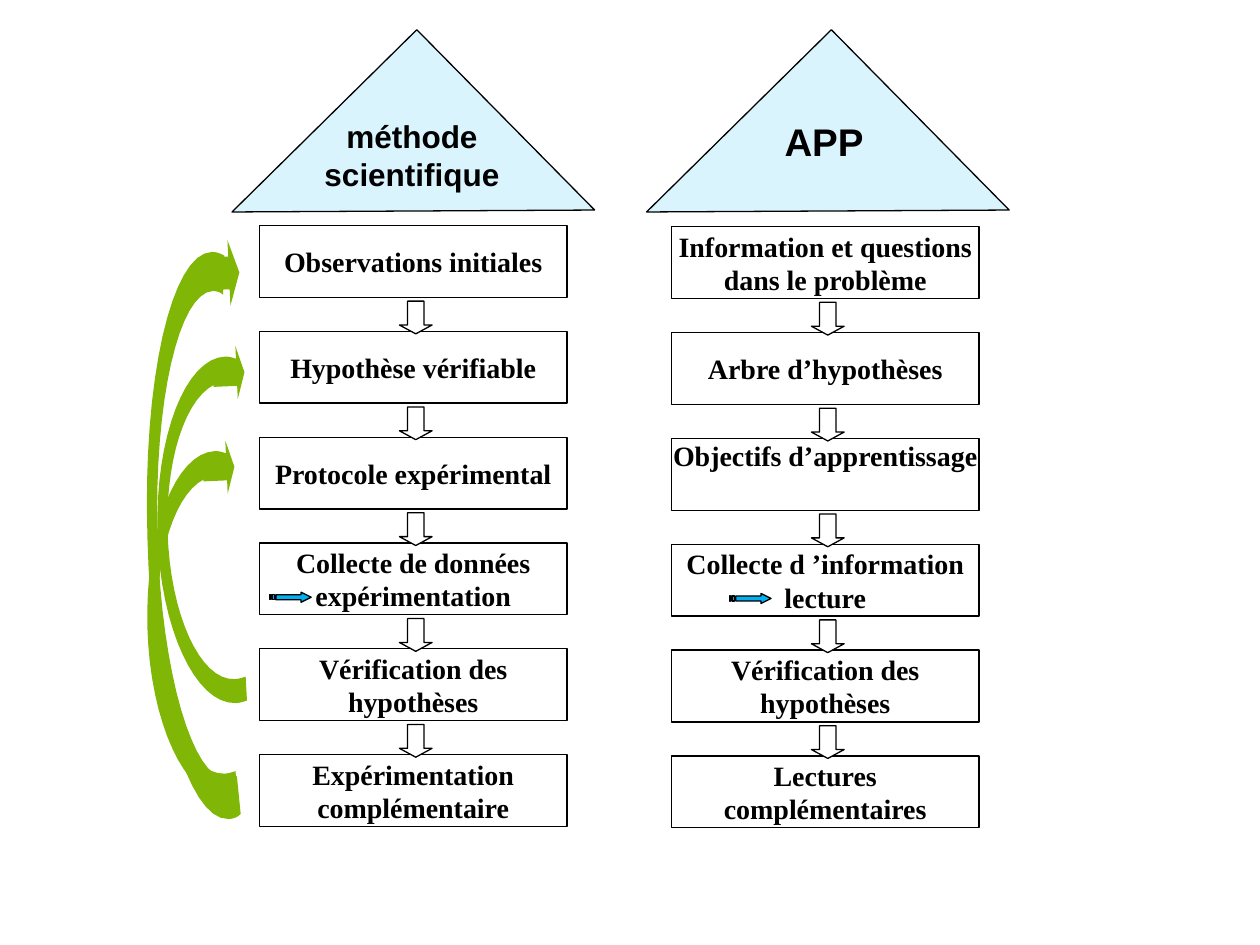
from dataclasses import dataclass

from pptx import Presentation
from pptx.dml.color import RGBColor
from pptx.enum.shapes import MSO_SHAPE
from pptx.enum.text import MSO_ANCHOR, PP_ALIGN
from pptx.util import Inches, Pt

Point = tuple[float, float]


@dataclass(frozen=True)
class Theme:
    black: RGBColor = RGBColor(0x00, 0x00, 0x00)
    white: RGBColor = RGBColor(0xFF, 0xFF, 0xFF)
    roof: RGBColor = RGBColor(0xDA, 0xF4, 0xFE)
    marker: RGBColor = RGBColor(0x00, 0xB0, 0xF0)
    loop: RGBColor = RGBColor(0x80, 0xB6, 0x06)
    step_font: str = "Times New Roman"
    step_size: int = 16
    head_font: str = "Arial"
    line: float = 0.75


@dataclass(frozen=True)
class Column:
    heading: str
    head_size: int
    head_top: float
    head_inset: float
    roof_left: float
    left: float
    top: float
    marker: Point
    steps: tuple[str, ...]
    top_aligned: tuple[int, ...] = ()


@dataclass(frozen=True)
class Loop:
    """A feedback arrow: band outline of cubic curves plus an arrowhead."""
    start: Point
    inner: tuple[tuple[Point, Point, Point], ...]
    turn: Point
    outer: tuple[tuple[Point, Point, Point], ...]
    head: tuple[float, float, float, float]
    shift: Point = (0, 0)


THEME = Theme()
BOX_W, BOX_H, PITCH = 2.44, 0.57, 0.84
ARROW, ARROW_DX, ARROW_DY = 0.26, 1.11, 0.6
HEAD_TILT = -2.6

COLUMNS = (
    Column("méthode scientifique", 18, 0.83, 0.1, 2.25, 2.06, 1.79, (2.14, 4.7),
           ("Observations initiales", "Hypothèse vérifiable",
            "Protocole expérimental", "Collecte de données expérimentation",
            "Vérification des hypothèses", "Expérimentation complémentaire")),
    Column("APP", 22, 0.67, 0.27, 5.54, 5.33, 1.8, (5.79, 4.71),
           ("Information et questions dans le problème", "Arbre d’hypothèses",
            "Objectifs d’apprentissage", "Collecte d ’information lecture",
            "Vérification des hypothèses", "Lectures complémentaires"), (2,)),
)

SHORT_BAND = dict(
    start=(1.87, 6.12),
    inner=(((1.84, 6.13), (1.81, 6.14), (1.78, 6.14)),
           ((1.51, 6.15), (1.27, 5.63), (1.25, 4.97)),
           ((1.23, 4.32), (1.44, 3.78), (1.72, 3.78)),
           ((1.74, 3.78), (1.77, 3.78), (1.8, 3.79))),
    turn=(1.8, 3.6),
    outer=(((1.77, 3.59), (1.74, 3.58), (1.71, 3.58)),
           ((1.39, 3.59), (1.15, 4.22), (1.17, 4.98)),
           ((1.19, 5.73), (1.47, 6.34), (1.79, 6.33)),
           ((1.82, 6.33), (1.85, 6.32), (1.88, 6.31))),
)
LOOPS = (
    Loop(**SHORT_BAND, head=(1.61, 3.5, 0.25, 0.42)),
    Loop(start=(1.88, 6.16),
         inner=(((1.86, 6.17), (1.83, 6.18), (1.8, 6.18)),
                ((1.53, 6.19), (1.28, 5.33), (1.25, 4.26)),
                ((1.22, 3.19), (1.42, 2.32), (1.69, 2.31)),
                ((1.72, 2.31), (1.75, 2.32), (1.77, 2.34))),
         turn=(1.78, 2.03),
         outer=(((1.75, 2.01), (1.71, 2.0), (1.68, 2.0)),
                ((1.36, 2.01), (1.13, 3.02), (1.17, 4.27)),
                ((1.2, 5.51), (1.49, 6.51), (1.81, 6.5)),
                ((1.85, 6.5), (1.88, 6.49), (1.91, 6.46))),
         head=(1.57, 1.91, 0.33, 0.52)),
    Loop(**SHORT_BAND, head=(1.69, 2.75, 0.25, 0.42), shift=(0.08, -0.75)),
)

# Striped marker: arrow and two stripes, relative to its top left corner
MARKER = (
    ((0.25, 0), (0.25, 0.02), (0.05, 0.02), (0.05, 0.06),
     (0.25, 0.06), (0.25, 0.08), (0.33, 0.04)),
    ((0.02, 0.02), (0.02, 0.06), (0.04, 0.06), (0.04, 0.02)),
    ((0, 0.02), (0, 0.06), (0.01, 0.06), (0.01, 0.02)),
)


def paint(sp, fill: RGBColor, outlined: bool = True) -> None:
    sp.shadow.inherit = False
    sp.fill.solid()
    sp.fill.fore_color.rgb = fill
    if outlined:
        sp.line.color.rgb = THEME.black
        sp.line.width = Pt(THEME.line)
    else:
        sp.line.fill.background()


def add_preset(shapes, kind, at, fill: RGBColor, outlined: bool = True):
    sp = shapes.add_shape(kind, *map(Inches, at))
    paint(sp, fill, outlined)
    return sp


def add_outline(shapes, contours, shift: Point, fill: RGBColor, outlined: bool = True):
    dx, dy = shift
    moved = [[(Inches(x + dx), Inches(y + dy)) for x, y in c] for c in contours]
    builder = shapes.build_freeform(*moved[0][0], scale=1.0)
    for i, contour in enumerate(moved):
        if i:
            builder.move_to(*contour[0])
        builder.add_line_segments(contour[1:], close=True)
    sp = builder.convert_to_shape()
    paint(sp, fill, outlined)
    return sp


def write(sp, text: str, font: str, size: int, anchor, inset: float = 0, top: float = 0) -> None:
    tf = sp.text_frame
    tf.word_wrap = True
    tf.vertical_anchor = anchor
    tf.margin_left = tf.margin_right = tf.margin_bottom = Inches(inset)
    tf.margin_top = Inches(top)
    p = tf.paragraphs[0]
    p.text = text
    p.alignment = PP_ALIGN.CENTER
    p.font.name, p.font.size, p.font.bold = font, Pt(size), True
    p.font.color.rgb = THEME.black


def sample_curves(start: Point, curves, steps: int = 16) -> list[Point]:
    points = [start]
    for b, c, d in curves:
        a = points[-1]
        for i in range(1, steps + 1):
            t = i / steps
            u = 1 - t
            points.append(tuple(
                u**3 * a[k] + 3 * u * u * t * b[k] + 3 * u * t * t * c[k] + t**3 * d[k]
                for k in (0, 1)))
    return points


def draw_column(shapes, col: Column) -> None:
    # Triangular roof with its heading
    roof = add_preset(shapes, MSO_SHAPE.RIGHT_TRIANGLE,
                      (col.roof_left, 0.67, 2.06, 2.01), THEME.roof)
    roof.rotation = 135.4
    box = shapes.add_textbox(*map(Inches, (col.left + 0.49, col.head_top, 1.44, 0.9)))
    write(box, col.heading, THEME.head_font, col.head_size,
          MSO_ANCHOR.TOP, 0.01, col.head_inset)

    # Step boxes
    tops = [col.top + i * PITCH for i in range(len(col.steps))]
    for i, (top, text) in enumerate(zip(tops, col.steps)):
        sp = add_preset(shapes, MSO_SHAPE.RECTANGLE, (col.left, top, BOX_W, BOX_H), THEME.white)
        anchor = MSO_ANCHOR.TOP if i in col.top_aligned else MSO_ANCHOR.MIDDLE
        write(sp, text, THEME.step_font, THEME.step_size, anchor)

    # Arrows between steps
    for top in tops[:-1]:
        sp = add_preset(shapes, MSO_SHAPE.DOWN_ARROW,
                        (col.left + ARROW_DX, top + ARROW_DY, ARROW, ARROW), THEME.white)
        sp.adjustments[0], sp.adjustments[1] = 0.5, 0.27
    add_outline(shapes, MARKER, col.marker, THEME.marker)


def draw_loop(shapes, loop: Loop) -> None:
    group = shapes.add_group_shape().shapes
    band = sample_curves(loop.start, loop.inner) + sample_curves(loop.turn, loop.outer)
    add_outline(group, [band], loop.shift, THEME.loop, outlined=False)
    head = add_preset(group, MSO_SHAPE.RIGHT_ARROW, loop.head, THEME.loop, outlined=False)
    head.adjustments[0], head.adjustments[1] = 0.5, 0.25
    head.rotation = HEAD_TILT


def main() -> None:
    prs = Presentation()
    prs.slide_width, prs.slide_height = Inches(10), Inches(7.5)
    s = prs.slides.add_slide(prs.slide_layouts[6])
    for col in COLUMNS:
        draw_column(s.shapes, col)
    for loop in LOOPS:
        draw_loop(s.shapes, loop)
    prs.save("out.pptx")


if __name__ == "__main__":
    main()
